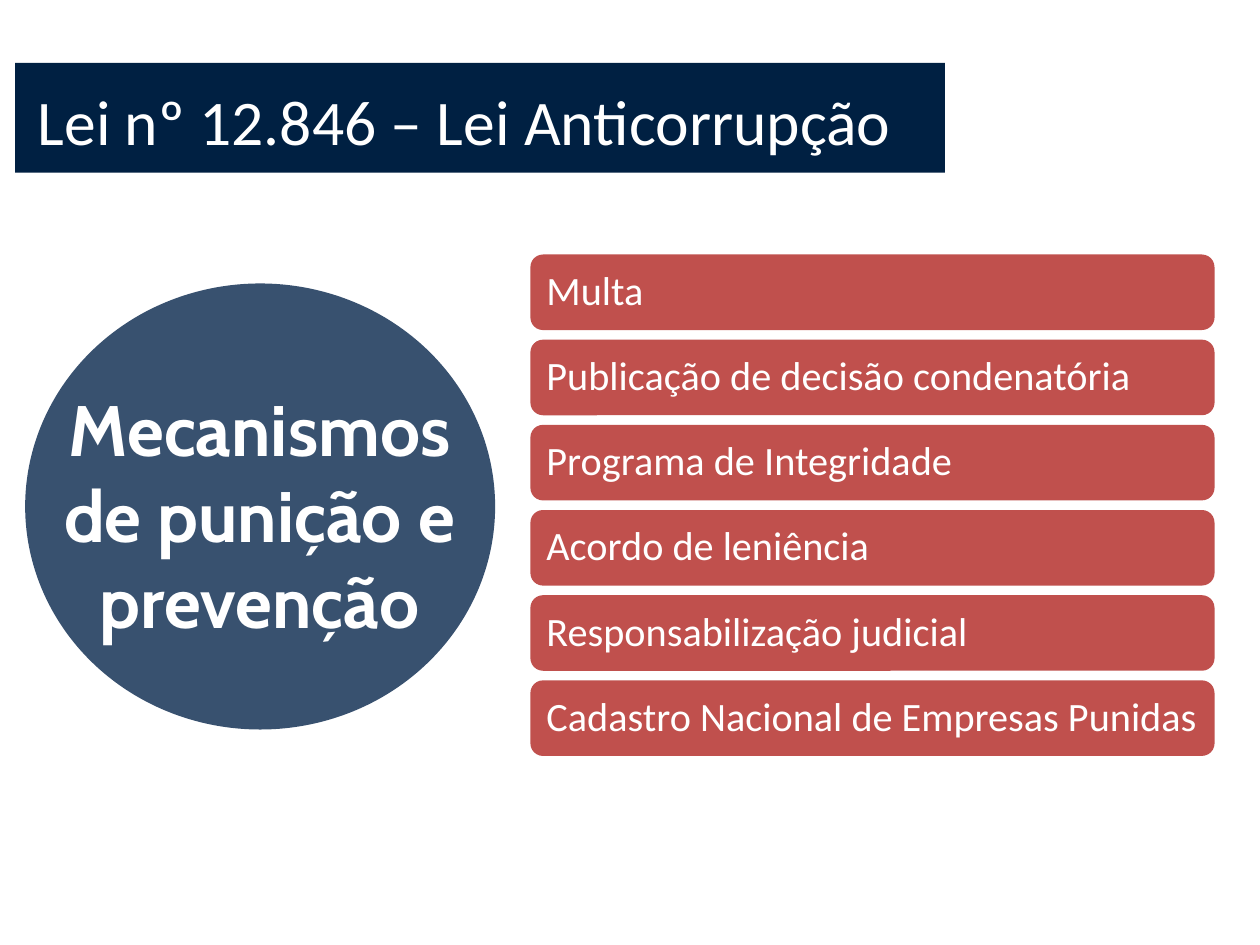
from lxml.etree import SubElement
from pptx import Presentation
from pptx.dml.color import RGBColor
from pptx.enum.shapes import MSO_SHAPE
from pptx.enum.text import MSO_ANCHOR, MSO_AUTO_SIZE, PP_ALIGN
from pptx.oxml.ns import qn
from pptx.util import Inches, Pt

COLORS = {"band": "002042", "circle": "254061", "bar": "C0504D", "text": "FFFFFF"}
MEASURES = [
    "Multa",
    "Publicação de decisão condenatória",
    "Programa de Integridade",
    "Acordo de leniência",
    "Responsabilização judicial",
    "Cadastro Nacional de Empresas Punidas",
]


def write_text(shape, text, size, font="Calibri", bold=False, align=PP_ALIGN.LEFT,
               anchor=MSO_ANCHOR.TOP, inset_x=0.1, inset_y=0.05, line_spacing=1.0):
    frame = shape.text_frame
    frame.text = text
    frame.word_wrap = True
    frame.auto_size = MSO_AUTO_SIZE.NONE
    frame.vertical_anchor = anchor
    frame.margin_left = frame.margin_right = Inches(inset_x)
    frame.margin_top = frame.margin_bottom = Inches(inset_y)
    for paragraph in frame.paragraphs:
        paragraph.alignment = align
        paragraph.line_spacing = line_spacing
        paragraph.font.size = Pt(size)
        paragraph.font.name = font
        paragraph.font.bold = bold
        paragraph.font.color.rgb = RGBColor.from_string(COLORS["text"])


def add_filled_shape(slide, kind, left, top, width, height, color):
    shape = slide.shapes.add_shape(
        kind, Inches(left), Inches(top), Inches(width), Inches(height))
    shape.shadow.inherit = False
    shape.fill.solid()
    shape.fill.fore_color.rgb = RGBColor.from_string(COLORS[color])
    shape.line.fill.background()
    return shape


presentation = Presentation()
presentation.slide_width = Inches(10)
presentation.slide_height = Inches(7.5)
slide = presentation.slides.add_slide(presentation.slide_layouts[5])

title = slide.shapes.title
title.left, title.top = Inches(0.2), Inches(0.6)
title.width, title.height = Inches(7.21), Inches(1.01)
write_text(title, "Lei nº 12.846 – Lei Anticorrupção", 36.3)

title_band = add_filled_shape(slide, MSO_SHAPE.RECTANGLE, 0.12, 0.5, 7.38, 0.87, "band")
title.element.addprevious(title_band.element)

circle = add_filled_shape(slide, MSO_SHAPE.OVAL, 0.2, 2.25, 3.73, 3.54, "circle")
circle_color = circle.element.spPr.find(qn("a:solidFill")).find(qn("a:srgbClr"))
SubElement(circle_color, qn("a:alpha"), val="91000")

circle_label = slide.shapes.add_textbox(
    Inches(0.12), Inches(3.01), Inches(3.88), Inches(2.46))
write_text(circle_label, "Mecanismos de punição e\nprevenção", 40.8,
           font="Cabin", bold=True, align=PP_ALIGN.CENTER)

for index, measure in enumerate(MEASURES):
    bar = add_filled_shape(slide, MSO_SHAPE.ROUNDED_RECTANGLE,
                           4.21, 2.02 + index * 0.676, 5.43, 0.6, "bar")
    write_text(bar, measure, 23, anchor=MSO_ANCHOR.MIDDLE, inset_y=0.1, line_spacing=0.9)

presentation.save("out.pptx")
